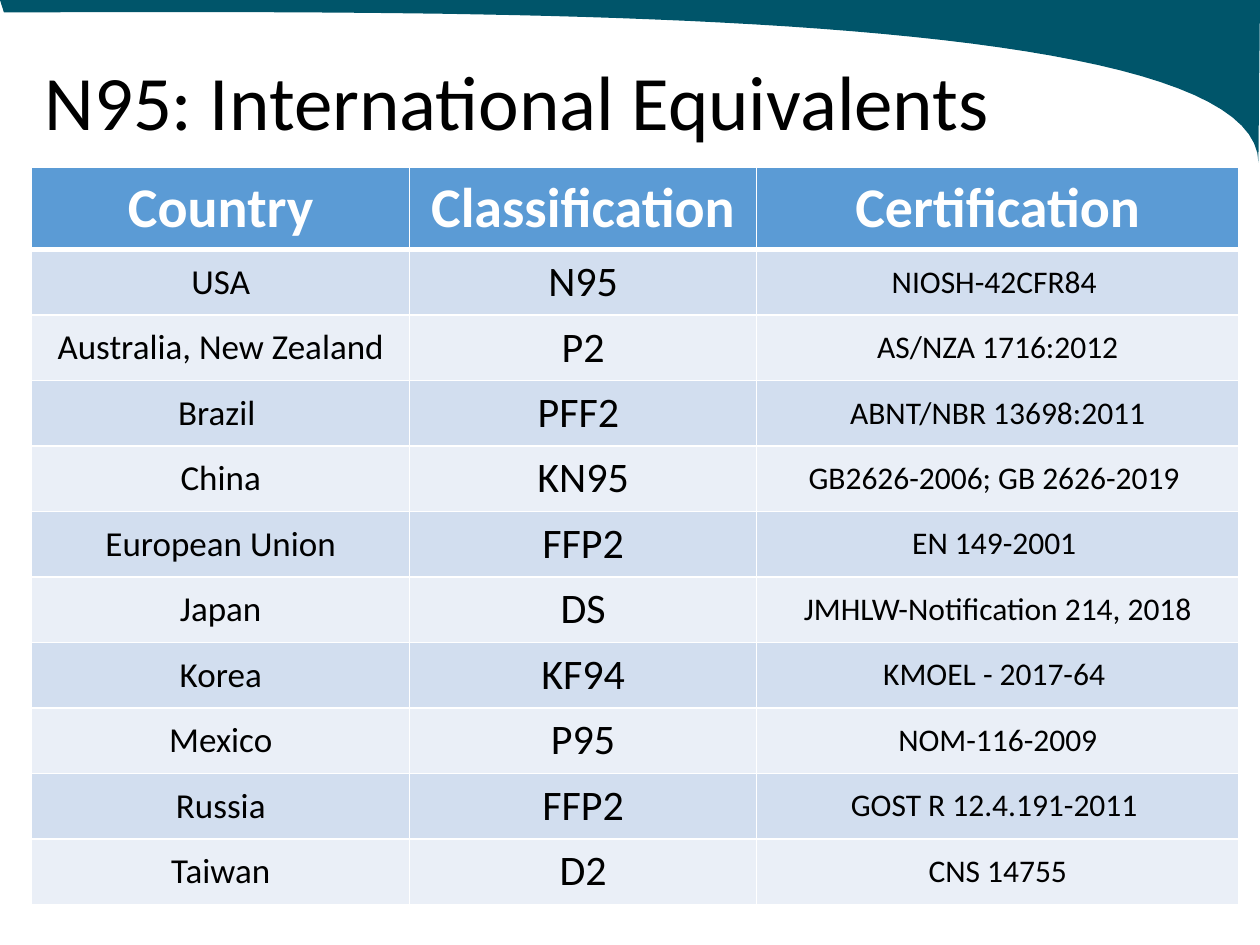
from dataclasses import dataclass

from lxml import etree
from pptx import Presentation
from pptx.dml.color import RGBColor as Rgb
from pptx.enum.text import MSO_ANCHOR as Anchor, PP_ALIGN as Align
from pptx.oxml.ns import qn
from pptx.util import Cm, Pt


@dataclass(frozen=True)
class Theme:
    font: str = "Calibri"
    teal: str = "00556A"
    black: str = "000000"
    white: str = "FFFFFF"
    header: str = "5B9BD5"
    bands: tuple = ("D2DEEF", "EAEFF7")
    title_size: int = 44
    header_size: int = 32
    column_sizes: tuple = (20, 24, 18)
    thin: int = 1
    thick: int = 3


def bezier(start, control_a, control_b, end, steps=48):
    points = []
    for step in range(1, steps + 1):
        t = step / steps
        weights = ((1 - t) ** 3, 3 * t * (1 - t) ** 2, 3 * t ** 2 * (1 - t), t ** 3)
        corners = (start, control_a, control_b, end)
        points.append(tuple(
            Cm(sum(w * corner[axis] for w, corner in zip(weights, corners)))
            for axis in (0, 1)
        ))
    return points


def add_border(cell, side, width, color):
    line = etree.SubElement(cell._tc.get_or_add_tcPr(), qn(f"a:ln{side}"), w=str(Pt(width)))
    fill = etree.SubElement(line, qn("a:solidFill"))
    etree.SubElement(fill, qn("a:srgbClr"), val=color)


theme = Theme()
deck = Presentation()
deck.slide_width, deck.slide_height = Cm(25.4), Cm(19.05)
page = deck.slides.add_slide(deck.slide_layouts[5])

title = page.shapes.title
title.left, title.top, title.width, title.height = Cm(0.64), Cm(0.28), Cm(22.96), Cm(3.68)
title.text_frame.text = "N95: International Equivalents"
title.text_frame.vertical_anchor = Anchor.MIDDLE
para = title.text_frame.paragraphs[0]
para.alignment = Align.LEFT
para.line_spacing = 0.9
para.font.name = theme.font
para.font.size = Pt(theme.title_size)
para.font.color.rgb = Rgb.from_string(theme.black)

right_edge, curve_end, left_end = (25.4, 0), (25.37, 3.28), (0.08, 0.25)
builder = page.shapes.build_freeform(0, 0)
builder.add_line_segments(
    [(Cm(25.4), 0)]
    + bezier(right_edge, (25.4, 0.36), (25.37, 2.92), curve_end)
    + bezier(curve_end, (25.35, 0), (8.53, 0.25), left_end),
    close=True,
)
swoosh = builder.convert_to_shape()
swoosh.shadow.inherit = False
swoosh.fill.solid()
swoosh.fill.fore_color.rgb = Rgb.from_string(theme.teal)
swoosh.line.fill.background()
title.element.addprevious(swoosh.element)

rows = [
    ("Country", "Classification", "Certification"),
    ("USA", "N95", "NIOSH-42CFR84 "),
    ("Australia, New Zealand", "P2", "AS/NZA 1716:2012"),
    ("Brazil ", "PFF2 ", "ABNT/NBR 13698:2011"),
    ("China", "KN95", "GB2626-2006; GB 2626-2019 "),
    ("European Union", "FFP2", "EN 149-2001 "),
    ("Japan", "DS", "JMHLW-Notification 214, 2018"),
    ("Korea", "KF94", "KMOEL - 2017-64 "),
    ("Mexico", "P95", "NOM-116-2009"),
    ("Russia", "FFP2", "GOST R 12.4.191-2011 "),
    ("Taiwan", "D2", "CNS 14755"),
]
widths = (7.62, 6.99, 9.73)
header_height, row_height = 1.65, 1.32
table = page.shapes.add_table(
    len(rows), len(widths), Cm(0.64), Cm(3.38),
    Cm(sum(widths)), Cm(header_height + row_height * (len(rows) - 1)),
).table
for column, width in zip(table.columns, widths):
    column.width = Cm(width)

for r, values in enumerate(rows):
    is_header = r == 0
    table.rows[r].height = Cm(header_height if is_header else row_height)
    fill = theme.header if is_header else theme.bands[(r - 1) % 2]
    for c, value in enumerate(values):
        cell = table.cell(r, c)
        for side in "LRTB":
            at_header_rule = (r, side) in ((0, "B"), (1, "T"))
            add_border(cell, side, theme.thick if at_header_rule else theme.thin, theme.white)
        cell.fill.solid()
        cell.fill.fore_color.rgb = Rgb.from_string(fill)
        cell.vertical_anchor = Anchor.MIDDLE
        cell.text = value
        para = cell.text_frame.paragraphs[0]
        para.alignment = Align.CENTER
        para.font.name = theme.font
        para.font.bold = is_header
        para.font.size = Pt(theme.header_size if is_header else theme.column_sizes[c])
        para.font.color.rgb = Rgb.from_string(theme.white if is_header else theme.black)

deck.save("out.pptx")
